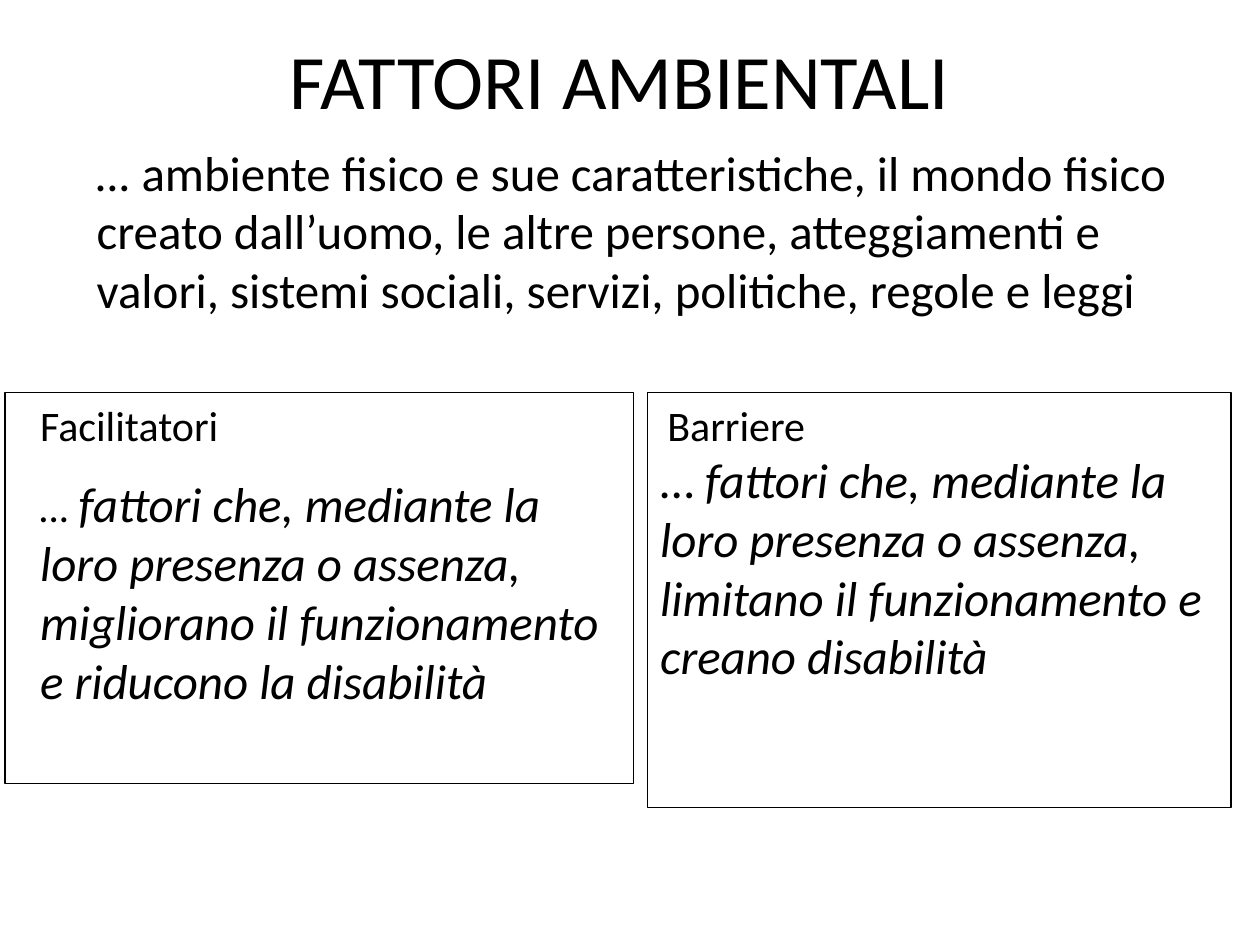
from dataclasses import dataclass

from pptx import Presentation
from pptx.dml.color import RGBColor
from pptx.enum.shapes import MSO_SHAPE as Shape
from pptx.enum.text import MSO_ANCHOR as Anchor, PP_ALIGN as Align
from pptx.util import Cm, Pt


@dataclass(frozen=True)
class Theme:
    font: str = "Calibri"
    ink: RGBColor = RGBColor(0, 0, 0)
    title: int = 44
    body: int = 28
    heading: int = 24
    small: int = 18
    border: float = 0.75


THEME = Theme()
PANEL_TOP = 7.92

# Each paragraph is a list of runs: (text, size, italic)
TITLE = [[("FATTORI AMBIENTALI", THEME.title, False)]]
INTRO = [[
    ("… ", THEME.body, True),
    ("ambiente fisico e sue caratteristiche, il mondo fisico creato dall’uomo, "
     "le altre persone, atteggiamenti e valori, sistemi sociali, servizi, "
     "politiche, regole e leggi", THEME.body, False),
]]
BARRIERS = [
    [(" ", THEME.small, False), ("Barriere", THEME.heading, False)],
    [("… ", THEME.body, False),
     ("fattori che, mediante la loro presenza o assenza, limitano il "
      "funzionamento e creano disabilità", THEME.body, True)],
]
FACILITATORS = [
    [("Facilitatori", THEME.heading, False)],
    [("… ", THEME.heading, True),
     ("fattori che, mediante la loro presenza o assenza, migliorano il "
      "funzionamento e riducono la disabilità", THEME.body, True)],
]

# Boxes are left, top, width, height in centimetres
PARTS = [
    {"text": TITLE, "box": (0.64, 0, 23.7, 3.18),
     "frame": {"vertical_anchor": Anchor.MIDDLE},
     "paragraph": {"alignment": Align.CENTER}},
    {"text": BARRIERS, "box": (13.06, PANEL_TOP, 11.76, 8.36), "bordered": True},
    {"text": INTRO, "box": (1.7, 2.74, 22.22, 5.28)},
    {"text": FACILITATORS, "box": (0.1, PANEL_TOP, 12.67, 7.87), "bordered": True,
     "frame": {"margin_left": Cm(0.71)}, "gap": 14},
]


def apply(target, formats):
    for name, value in formats.items():
        setattr(target, name, value)


def add_holder(slide, box, bordered):
    place = [Cm(length) for length in box]
    if not bordered:
        return slide.shapes.add_textbox(*place)
    panel = slide.shapes.add_shape(Shape.RECTANGLE, *place)
    panel.shadow.inherit = False
    panel.fill.background()
    panel.line.color.rgb = THEME.ink
    panel.line.width = Pt(THEME.border)
    return panel


def write(frame, paragraphs, formats, gap):
    """Fill the frame, with gap points between successive paragraphs."""
    for index, runs in enumerate(paragraphs):
        paragraph = frame.add_paragraph() if index else frame.paragraphs[0]
        apply(paragraph, {"alignment": Align.LEFT, **formats})
        if index and gap:
            paragraph.space_before = Pt(gap)
        for text, size, italic in runs:
            run = paragraph.add_run()
            run.text = text
            apply(run.font, {"name": THEME.font, "size": Pt(size), "italic": italic})
            run.font.color.rgb = THEME.ink


def main():
    deck = Presentation()
    apply(deck, {"slide_width": Cm(25.4), "slide_height": Cm(19.05)})
    slide = deck.slides.add_slide(deck.slide_layouts[6])
    for part in PARTS:
        frame = add_holder(slide, part["box"], part.get("bordered", False)).text_frame
        apply(frame, {"word_wrap": True, "vertical_anchor": Anchor.TOP,
                      **part.get("frame", {})})
        write(frame, part["text"], part.get("paragraph", {}), part.get("gap", 0))
    deck.save("out.pptx")


if __name__ == "__main__":
    main()
